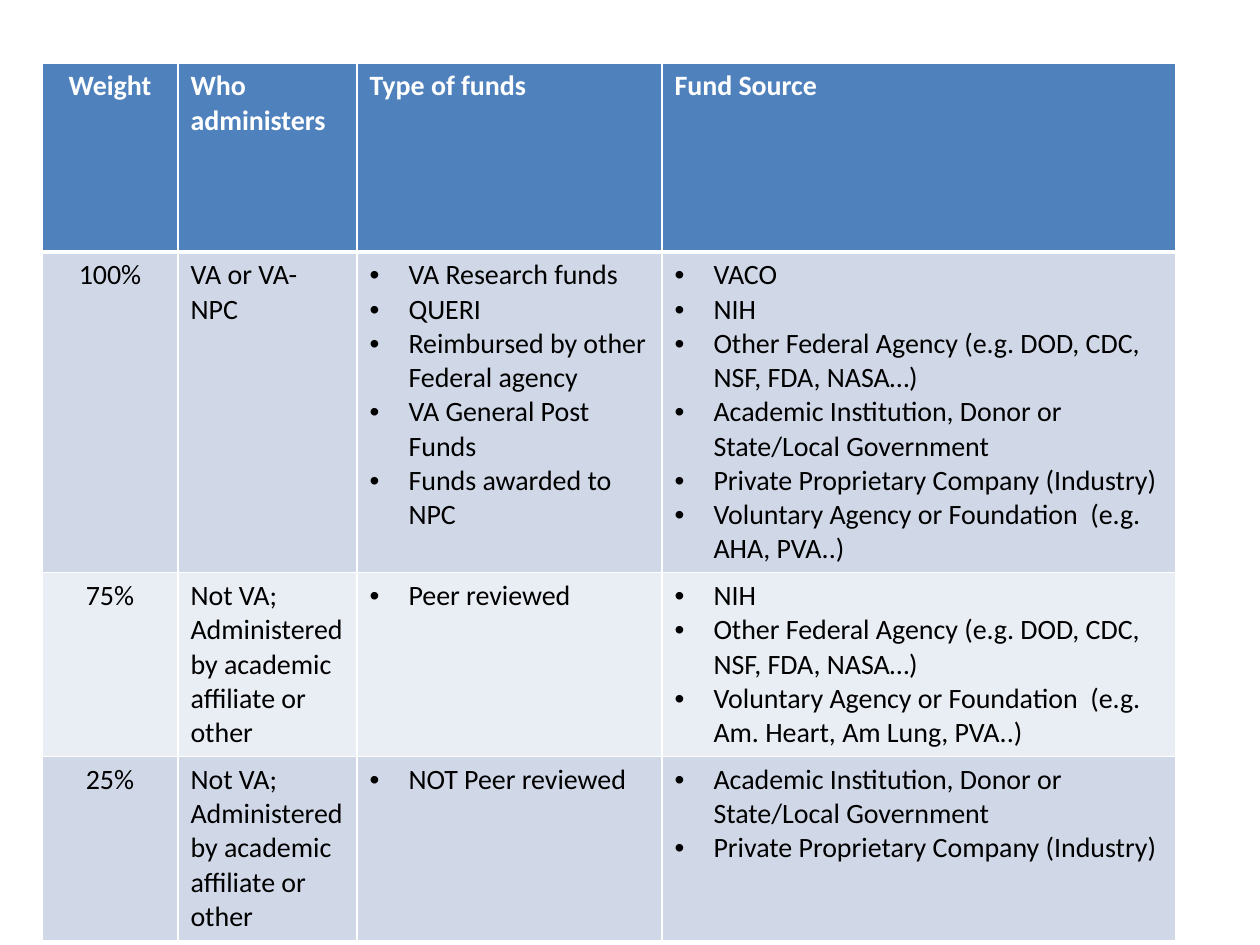
from dataclasses import dataclass

from lxml import etree
from pptx import Presentation
from pptx import util as u
from pptx.dml.color import RGBColor
from pptx.enum import text
from pptx.oxml import ns

PX = u.Inches(1) / 126


@dataclass(frozen=True)
class Theme:
    font: str = "Calibri"
    size: int = 16
    header_fill: str = "4F81BD"
    header_text: str = "FFFFFF"
    body_text: str = "000000"
    bands: tuple = ("D0D8E8", "E9EDF4")
    border: str = "FFFFFF"
    thin: int = 1
    thick: int = 3


THEME = Theme()

COLUMN_WIDTHS = (136, 179, 305, 514)
ROW_HEIGHTS = (189, 284, 121, 121)
BULLET_INDENT = 39

FEDERAL = "Other Federal Agency (e.g. DOD, CDC, NSF, FDA, NASA…)"
ACADEMIC = "Academic Institution, Donor or State/Local Government"
INDUSTRY = "Private Proprietary Company (Industry)"
AFFILIATE = "Not VA;  Administered by academic affiliate or other"

# A list is a bulleted cell; a string is plain text.
FUNDING_ROWS = (
    ("Weight", "Who administers", "Type of funds", "Fund Source"),
    ("100%", "VA or VA-NPC",
     ["VA Research funds", "QUERI", "Reimbursed by other Federal agency",
      "VA General Post Funds", "Funds awarded to NPC"],
     ["VACO", "NIH", FEDERAL, ACADEMIC, INDUSTRY,
      "Voluntary Agency or Foundation  (e.g. AHA, PVA..)"]),
    ("75%", AFFILIATE, ["Peer reviewed"],
     ["NIH", FEDERAL,
      "Voluntary Agency or Foundation  (e.g. Am. Heart, Am Lung, PVA..)"]),
    ("25%", AFFILIATE, ["NOT Peer reviewed"], [ACADEMIC, INDUSTRY]),
)


def px(length):
    return u.Emu(round(length * PX))


def add_bullet(paragraph):
    properties = paragraph._p.get_or_add_pPr()
    properties.set("marL", str(px(BULLET_INDENT)))
    properties.set("indent", str(-px(BULLET_INDENT)))
    font = etree.SubElement(properties, ns.qn("a:buFont"))
    font.set("typeface", "Arial")
    etree.SubElement(properties, ns.qn("a:buChar")).set("char", "•")


def set_borders(cell, top, bottom):
    """Draw all four sides; top and bottom are widths in points."""
    properties = cell._tc.get_or_add_tcPr()
    sides = (("L", THEME.thin), ("R", THEME.thin), ("T", top), ("B", bottom))
    for index, (side, width) in enumerate(sides):
        line = etree.Element(ns.qn(f"a:ln{side}"), w=str(u.Pt(width)))
        fill = etree.SubElement(line, ns.qn("a:solidFill"))
        etree.SubElement(fill, ns.qn("a:srgbClr")).set("val", THEME.border)
        properties.insert(index, line)


def write_cell(cell, content, color, bold, centered):
    bulleted = isinstance(content, list)
    cell.text_frame.text = "\n".join(content) if bulleted else content
    for paragraph in cell.text_frame.paragraphs:
        if centered:
            paragraph.alignment = text.PP_ALIGN.CENTER
        if bulleted:
            add_bullet(paragraph)
        for span in paragraph.runs:
            span.font.name = THEME.font
            span.font.size = u.Pt(THEME.size)
            span.font.bold = bold
            span.font.color.rgb = RGBColor.from_string(color)


def add_funding_table(page):
    frame = page.shapes.add_table(
        len(ROW_HEIGHTS), len(COLUMN_WIDTHS), px(42), px(63),
        px(sum(COLUMN_WIDTHS)), px(sum(ROW_HEIGHTS)))
    table = frame.table
    for column, width in zip(table.columns, COLUMN_WIDTHS):
        column.width = px(width)
    for index, (row, height) in enumerate(zip(table.rows, ROW_HEIGHTS)):
        row.height = px(height)
        header = index == 0
        fill = THEME.header_fill if header else THEME.bands[(index - 1) % 2]
        color = THEME.header_text if header else THEME.body_text
        top = THEME.thick if index == 1 else THEME.thin
        bottom = THEME.thick if header else THEME.thin
        for position, content in enumerate(FUNDING_ROWS[index]):
            cell = row.cells[position]
            cell.fill.solid()
            cell.fill.fore_color.rgb = RGBColor.from_string(fill)
            set_borders(cell, top, bottom)
            write_cell(cell, content, color, header, position == 0)


def main():
    deck = Presentation()
    deck.slide_width, deck.slide_height = px(1260), px(945)
    page = deck.slides.add_slide(deck.slide_layouts[6])
    add_funding_table(page)
    deck.save("out.pptx")


if __name__ == "__main__":
    main()
